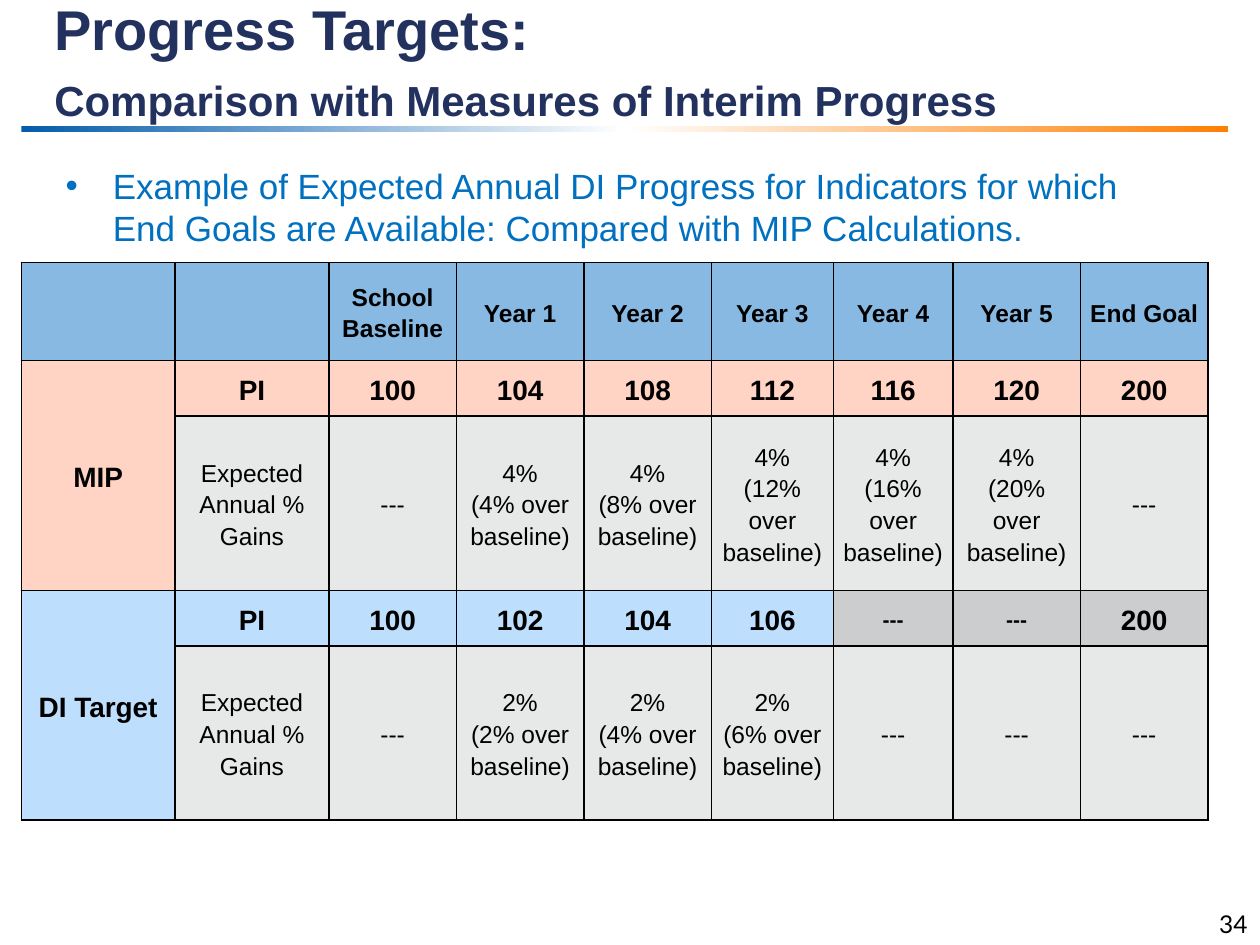
"""Build the progress targets slide comparing MIP and DI calculations."""
from copy import deepcopy
from dataclasses import dataclass

from lxml import etree
from pptx import Presentation
from pptx.dml.color import RGBColor
from pptx.enum import shapes, text
from pptx.oxml import ns
from pptx.util import Cm, Pt


@dataclass(frozen=True)
class Theme:
    font: str = "Arial"
    number_font: str = "Lato"
    title: str = "22315E"
    body: str = "0070C0"
    ink: str = "000000"
    header: str = "87B9E3"
    mip: str = "FFD4C5"
    target: str = "BDDFFD"
    gains: str = "E7E8E8"
    unused: str = "CCCDCE"
    rule: tuple = ("045CAA", "FFFFFF", "FD7F03")
    title_size: int = 32
    subtitle_size: int = 24
    body_size: int = 20
    index_size: int = 16
    cell_size: int = 14
    dash_size: int = 12


THEME = Theme()
TITLE = ("Progress Targets: ", "Comparison with Measures of Interim Progress")
BULLET = ("Example of Expected Annual DI Progress for Indicators for which "
          "End Goals are Available: Compared with MIP Calculations.")
PAGE_NUMBER = "34"
DASH = "---"
GAINS = "Expected Annual % Gains"
HEADER = ["", "", "School Baseline", "Year 1", "Year 2", "Year 3", "Year 4", "Year 5", "End Goal"]
GROUPS = [
    {"name": "MIP", "fill": THEME.mip, "step": 4,
     "index": ["100", "104", "108", "112", "116", "120", "200"]},
    {"name": "DI Target", "fill": THEME.target, "step": 2,
     "index": ["100", "102", "104", "106", DASH, DASH, "200"]},
]
COLUMNS = [3.1, 3.1, 2.57, 2.57, 2.57, 2.46, 2.41, 2.57, 2.57]
HEADER_HEIGHT, INDEX_HEIGHT, GAINS_HEIGHT = 1.98, 1.12, 3.51


def place(shape, left, top, width, height):
    shape.left, shape.top, shape.width, shape.height = map(Cm, (left, top, width, height))


def style(span, size, color, bold=False, font=THEME.font):
    span.font.name, span.font.size, span.font.bold = font, Pt(size), bold
    span.font.color.rgb = RGBColor.from_string(color)


def add_rule(page):
    bar = page.shapes.add_shape(shapes.MSO_SHAPE.RECTANGLE, Cm(0.43), Cm(2.54), Cm(24.33), Cm(0.13))
    bar.shadow.inherit = False
    bar.line.fill.background()
    bar.fill.gradient()
    bar.fill.gradient_angle = 0
    stops = bar._element.spPr.find(".//" + ns.qn("a:gsLst"))
    stops.insert(1, deepcopy(stops[0]))
    for stop, color, position in zip(bar.fill.gradient_stops, THEME.rule, (0, 0.5, 1)):
        stop.color.rgb = RGBColor.from_string(color)
        stop.position = position
    page.shapes._spTree.insert(2, bar._element)


def add_title(page):
    box = page.shapes.title
    place(box, 0.84, 0.28, 23.93, 2.36)
    frame = box.text_frame
    frame.text = "\v".join(TITLE)
    frame.auto_size = text.MSO_AUTO_SIZE.NONE
    frame.vertical_anchor = text.MSO_ANCHOR.BOTTOM
    para = frame.paragraphs[0]
    para.alignment, para.line_spacing = text.PP_ALIGN.LEFT, Pt(36)
    for span, size in zip(para.runs, (THEME.title_size, THEME.subtitle_size)):
        style(span, size, THEME.title, True)


def add_body(page):
    box = page.placeholders[1]
    place(box, 1.07, 3.18, 21.84, 13.59)
    box.text_frame.text = BULLET
    box.text_frame.auto_size = text.MSO_AUTO_SIZE.NONE
    para = box.text_frame.paragraphs[0]
    para.space_before = Pt(0)
    properties = para._p.get_or_add_pPr()
    properties.set("marL", str(Cm(0.95)))
    properties.set("indent", str(-Cm(0.95)))
    etree.SubElement(properties, ns.qn("a:buFont"), typeface=THEME.font)
    etree.SubElement(properties, ns.qn("a:buChar"), char="•")
    style(para.runs[0], THEME.body_size, THEME.body)


def add_page_number(page):
    box = page.shapes.add_textbox(Cm(19.48), Cm(18.21), Cm(5.92), Cm(0.84))
    frame = box.text_frame
    frame.word_wrap = True
    frame.vertical_anchor = text.MSO_ANCHOR.MIDDLE
    frame.text = PAGE_NUMBER
    frame.paragraphs[0].alignment = text.PP_ALIGN.RIGHT
    style(frame.paragraphs[0].runs[0], THEME.cell_size, THEME.ink, font=THEME.number_font)


def fill_cell(cell, words, fill, size, bold):
    properties = cell._tc.get_or_add_tcPr()
    for side in ("lnL", "lnR", "lnT", "lnB"):
        line = etree.SubElement(properties, ns.qn("a:" + side), w=str(Pt(1)))
        solid = etree.SubElement(line, ns.qn("a:solidFill"))
        etree.SubElement(solid, ns.qn("a:srgbClr"), val=THEME.ink)
    cell.fill.solid()
    cell.fill.fore_color.rgb = RGBColor.from_string(fill)
    cell.margin_left = cell.margin_right = Cm(0.18)
    cell.margin_top = cell.margin_bottom = 0
    cell.vertical_anchor = text.MSO_ANCHOR.MIDDLE
    cell.text = words
    for para in cell.text_frame.paragraphs:
        para.alignment, para.line_spacing = text.PP_ALIGN.CENTER, 1.15
        for span in para.runs:
            style(span, size, THEME.ink, bold)


def group_rows(group):
    fill, step = group["fill"], group["step"]
    name = (group["name"], fill, THEME.index_size, True)
    index = [name, ("PI", fill, THEME.index_size, True)]
    gains = [("", fill, THEME.index_size, True), (GAINS, THEME.gains, THEME.cell_size, False)]
    last = len(group["index"]) - 1
    has_gap = DASH in group["index"]
    for year, value in enumerate(group["index"]):
        empty = value == DASH
        unused = empty or (has_gap and year == last)
        index.append((value, THEME.unused if unused else fill,
                      THEME.dash_size if empty else THEME.index_size, True))
        no_gain = empty or year in (0, last)
        words = DASH if no_gain else f"{step}%\n({step * year}% over baseline)"
        gains.append((words, THEME.gains, THEME.cell_size, False))
    return [index, gains]


def add_targets_table(page):
    rows = [[(words, THEME.header, THEME.cell_size, True) for words in HEADER]]
    for group in GROUPS:
        rows += group_rows(group)
    heights = [HEADER_HEIGHT] + [INDEX_HEIGHT, GAINS_HEIGHT] * len(GROUPS)
    table = page.shapes.add_table(len(rows), len(COLUMNS), Cm(0.43), Cm(5.29),
                                  Cm(sum(COLUMNS)), Cm(sum(heights))).table
    table.first_row = table.horz_banding = False
    for column, width in zip(table.columns, COLUMNS):
        column.width = Cm(width)
    for row, height, cells in zip(table.rows, heights, rows):
        row.height = Cm(height)
        for cell, content in zip(row.cells, cells):
            fill_cell(cell, *content)
    for top in range(1, len(rows), 2):
        table.cell(top, 0).merge(table.cell(top + 1, 0))


def main():
    deck = Presentation()
    deck.slide_width, deck.slide_height = Cm(25.4), Cm(19.05)
    page = deck.slides.add_slide(deck.slide_layouts[1])
    add_rule(page)
    add_body(page)
    add_page_number(page)
    add_title(page)
    add_targets_table(page)
    deck.save("out.pptx")


if __name__ == "__main__":
    main()
